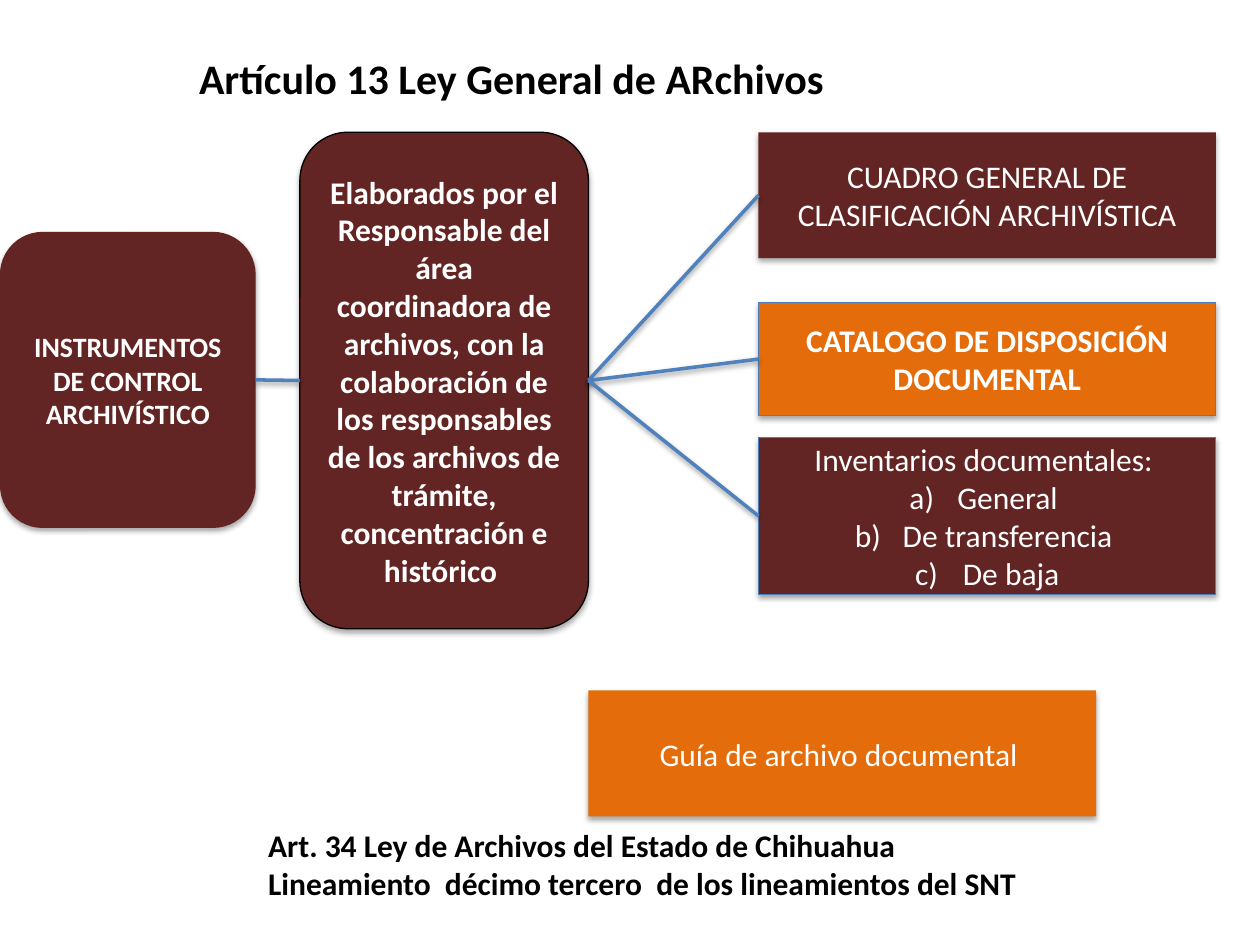
import pptx
import pptx.util
import pptx.dml.color
import pptx.enum.shapes
import pptx.enum.text
import lxml.etree
from dataclasses import dataclass

Inches = pptx.util.Inches
Pt = pptx.util.Pt
RGB = pptx.dml.color.RGBColor.from_string
MSO_SHAPE = pptx.enum.shapes.MSO_SHAPE
ANCHOR = pptx.enum.text.MSO_ANCHOR
ALIGN = pptx.enum.text.PP_ALIGN
A = "{http://schemas.openxmlformats.org/drawingml/2006/main}"


@dataclass
class Theme:
    font: str = "Calibri"
    wine: str = "632523"
    orange: str = "E46C0A"
    black: str = "000000"
    white: str = "FFFFFF"
    border: str = "4B7EBC"
    link: str = "4F81BD"
    title: int = 24
    body: int = 18
    small: int = 16


theme = Theme()


def write(tf, lines, size, color, bold, align, numbered=False):
    tf.text = "\n".join(lines)
    for i, p in enumerate(tf.paragraphs):
        p.alignment = align
        if numbered and i > 0:
            pPr = p._p.get_or_add_pPr()
            pPr.set("marL", str(Inches(0.38)))
            pPr.set("indent", str(-Inches(0.38)))
            lxml.etree.SubElement(pPr, A + "buAutoNum", type="alphaLcParenR")
        for r in p.runs:
            r.font.name = theme.font
            r.font.size = Pt(size)
            r.font.bold = bold
            r.font.color.rgb = RGB(color)


prs = pptx.Presentation()
prs.slide_width = Inches(10)
prs.slide_height = Inches(7.5)
s = prs.slides.add_slide(prs.slide_layouts[5])

round_box, box = MSO_SHAPE.ROUNDED_RECTANGLE, MSO_SHAPE.RECTANGLE
col_x, col_w = 6.02, 3.63
boxes = [
    ("instruments", round_box, (0, 1.84, 2.03, 2.35), theme.wine, None, theme.small, True,
     ["INSTRUMENTOS DE CONTROL ARCHIVÍSTICO"]),
    ("authors", round_box, (2.38, 1.05, 2.29, 3.94), theme.wine, theme.black, theme.body, True,
     ["Elaborados por el Responsable del área coordinadora de archivos, con la colaboración "
      "de los responsables de los archivos de trámite, concentración e histórico "]),
    ("classification", box, (col_x, 1.05, col_w, 1), theme.wine, None, theme.body, False,
     ["CUADRO GENERAL DE CLASIFICACIÓN ARCHIVÍSTICA"]),
    ("catalogue", box, (col_x, 2.4, col_w, 0.9), theme.orange, theme.border, theme.body, True,
     ["CATALOGO DE DISPOSICIÓN DOCUMENTAL"]),
    ("inventories", box, (col_x, 3.47, col_w, 1.25), theme.wine, theme.border, theme.body, False,
     ["Inventarios documentales: ", "General ", "De transferencia ", "De baja"]),
    ("guide", box, (4.67, 5.48, 4.03, 1), theme.orange, None, theme.body, False,
     ["Guía de archivo documental "]),
]
shapes = {}
for name, kind, place, fill, border, size, bold, lines in boxes:
    sp = s.shapes.add_shape(kind, *map(Inches, place))
    sp.fill.solid()
    sp.fill.fore_color.rgb = RGB(fill)
    if border:
        sp.line.color.rgb = RGB(border)
        sp.line.width = Pt(0.75)
    else:
        sp.line.fill.background()
    tf = sp.text_frame
    tf.word_wrap = True
    tf.vertical_anchor = ANCHOR.MIDDLE
    write(tf, lines, size, theme.white, bold, ALIGN.CENTER, numbered=True)
    shapes[name] = sp

LEFT_SITE, RIGHT_SITE = 1, 3
links = [
    ("instruments", "authors"),
    ("authors", "classification"),
    ("authors", "catalogue"),
    ("authors", "inventories"),
]
for start, end in links:
    cx = s.shapes.add_connector(pptx.enum.shapes.MSO_CONNECTOR.STRAIGHT, 0, 0, 0, 0)
    cx.begin_connect(shapes[start], RIGHT_SITE)
    cx.end_connect(shapes[end], LEFT_SITE)
    cx.line.color.rgb = RGB(theme.link)
    cx.line.width = Pt(2)

title = s.shapes.title
title.left, title.top, title.width, title.height = map(Inches, (1.48, 0.37, 5.21, 0.5))
sources = s.shapes.add_textbox(*map(Inches, (2.03, 6.51, 6.18, 0.71)))
texts = [
    (title, theme.title, ["Artículo 13 Ley General de ARchivos"]),
    (sources, theme.body, ["Art. 34 Ley de Archivos del Estado de Chihuahua",
                           "Lineamiento  décimo tercero  de los lineamientos del SNT"]),
]
for sp, size, lines in texts:
    tf = sp.text_frame
    tf.word_wrap = False
    tf.auto_size = pptx.enum.text.MSO_AUTO_SIZE.SHAPE_TO_FIT_TEXT
    tf.vertical_anchor = ANCHOR.TOP
    write(tf, lines, size, theme.black, True, ALIGN.LEFT)

prs.save("out.pptx")
